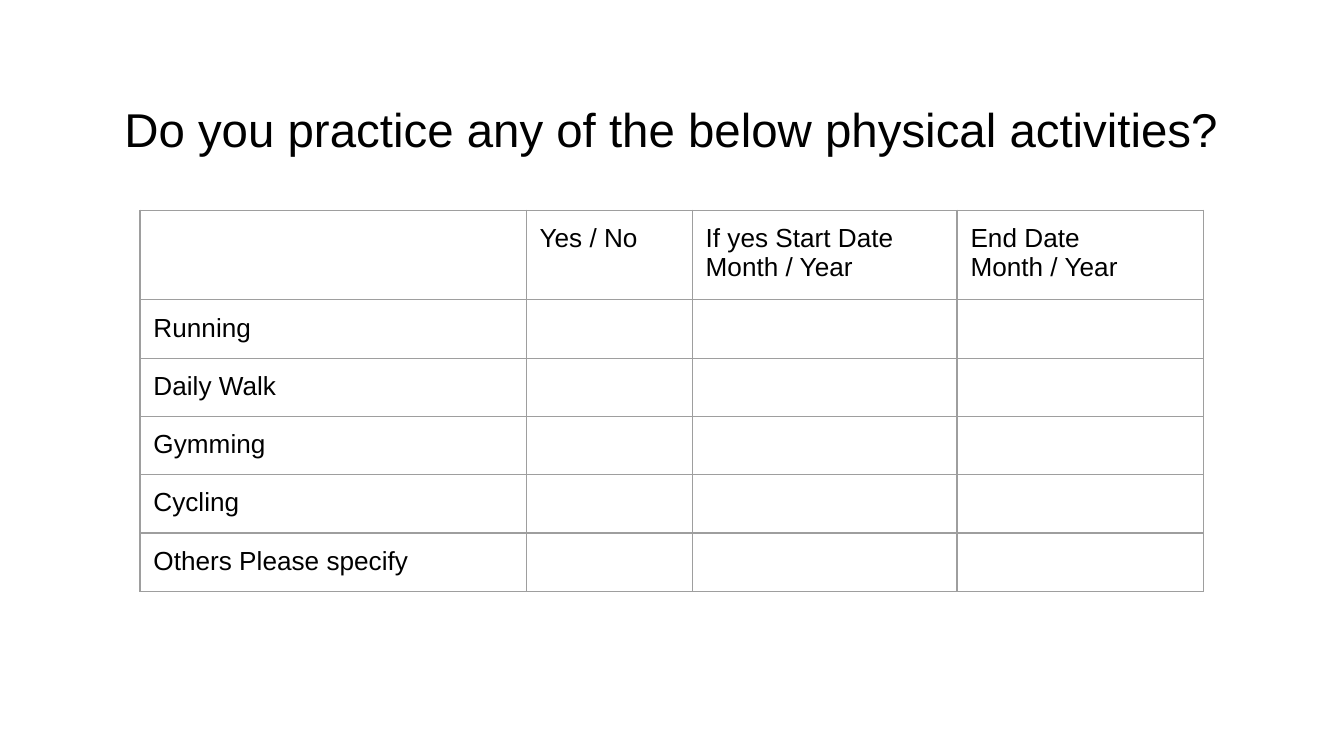
from lxml.etree import SubElement
from pptx import Presentation
from pptx.dml.color import RGBColor
from pptx.enum.text import MSO_ANCHOR, PP_ALIGN
from pptx.oxml.ns import qn
from pptx.util import Pt

BLACK = RGBColor(0x00, 0x00, 0x00)
GREY = RGBColor(0x9E, 0x9E, 0x9E)
FONT = "Arial"
CELL_SIZE = 14
INSET = Pt(7.2)

TITLE = "Do you practice any of the below physical activities?"
HEADINGS = ["", "Yes / No", "If yes Start Date\nMonth / Year", "End Date\nMonth / Year"]
ACTIVITIES = ["Running", "Daily Walk", "Gymming", "Cycling", "Others Please specify"]
COLUMN_WIDTHS = [206.9, 89, 141.9, 131.9]
HEADING_HEIGHT, ROW_HEIGHT = 46, 30.1
TABLE_LEFT, TABLE_TOP = 75, 112.6


def style_text(frame, size):
    for para in frame.paragraphs:
        for span in para.runs:
            span.font.name = FONT
            span.font.size = Pt(size)
            span.font.color.rgb = BLACK


def set_insets(area):
    area.margin_left = area.margin_right = INSET
    area.margin_top = area.margin_bottom = INSET


def set_borders(cell):
    properties = cell._tc.get_or_add_tcPr()
    for position, side in enumerate(("lnL", "lnR", "lnT", "lnB")):
        line = SubElement(properties, qn(f"a:{side}"), w=str(Pt(0.75)))
        fill = SubElement(line, qn("a:solidFill"))
        SubElement(fill, qn("a:srgbClr"), val=str(GREY))
        properties.insert(position, line)


def fill_cell(cell, text):
    cell.text_frame.text = text
    set_insets(cell)
    cell.fill.background()
    set_borders(cell)
    style_text(cell.text_frame, CELL_SIZE)
    if not text:
        # The end mark's size keeps an empty cell from stretching its row.
        para = cell.text_frame.paragraphs[0]
        SubElement(para._p, qn("a:endParaRPr"), sz=str(CELL_SIZE * 100))


def add_title(page):
    box = page.shapes.add_textbox(Pt(24.5), Pt(49.7), Pt(671), Pt(38.2))
    frame = box.text_frame
    frame.word_wrap = True
    frame.vertical_anchor = MSO_ANCHOR.MIDDLE
    set_insets(frame)
    frame.text = TITLE
    frame.paragraphs[0].alignment = PP_ALIGN.CENTER
    style_text(frame, 25.4)


def add_activity_table(page):
    rows = [HEADINGS] + [[name, "", "", ""] for name in ACTIVITIES]
    heights = [HEADING_HEIGHT] + [ROW_HEIGHT] * len(ACTIVITIES)
    table = page.shapes.add_table(
        len(rows), len(HEADINGS), Pt(TABLE_LEFT), Pt(TABLE_TOP),
        Pt(sum(COLUMN_WIDTHS)), Pt(sum(heights))).table
    table.first_row = table.horz_banding = False
    for column, width in zip(table.columns, COLUMN_WIDTHS):
        column.width = Pt(width)
    for row, height, texts in zip(table.rows, heights, rows):
        row.height = Pt(height)
        for cell, text in zip(row.cells, texts):
            fill_cell(cell, text)


def main():
    deck = Presentation()
    deck.slide_width, deck.slide_height = Pt(720), Pt(405)
    page = deck.slides.add_slide(deck.slide_layouts[6])
    add_title(page)
    add_activity_table(page)
    deck.save("out.pptx")


if __name__ == "__main__":
    main()
